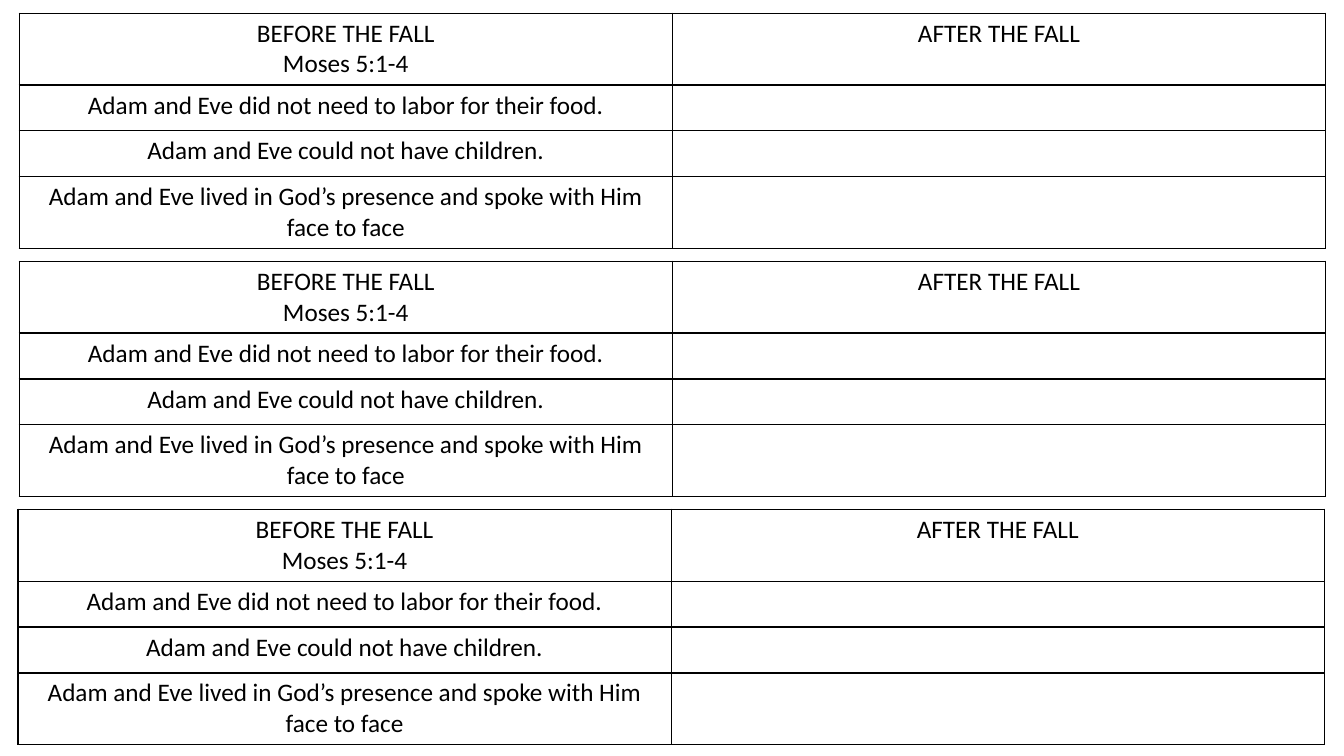
"""Three stacked worksheets comparing life before and after the Fall."""
from lxml.etree import SubElement
from pptx import Presentation
from pptx.dml.color import RGBColor
from pptx.enum.text import PP_ALIGN as Align
from pptx.oxml.ns import qn
from pptx.util import Pt

BLACK = RGBColor(0, 0, 0)
TEXT_FORMAT = {"name": "Calibri", "size": Pt(18), "bold": False}
COLUMN_WIDTH = 466.6
ROW_HEIGHTS = [51.3, 32.8, 32.8, 51.3]
FIRST_TOP, PITCH = 9.4, 177.2
WORKSHEET_LEFTS = [13.7, 13.7, 12.8]
STATEMENTS = [
    ("BEFORE THE FALL\nMoses 5:1-4", "AFTER THE FALL"),
    ("Adam and Eve did not need to labor for their food.", ""),
    ("Adam and Eve could not have children.", ""),
    ("Adam and Eve lived in God’s presence and spoke with Him face to face", ""),
]


def add_borders(cell):
    """Draw a thin black line on each side of the cell."""
    properties = cell._tc.get_or_add_tcPr()
    for position, side in enumerate(("a:lnL", "a:lnR", "a:lnT", "a:lnB")):
        line = SubElement(properties, qn(side), w=str(Pt(1)))
        properties.insert(position, line)
        fill = SubElement(line, qn("a:solidFill"))
        SubElement(fill, qn("a:srgbClr"), val=str(BLACK))


prs = Presentation()
prs.slide_width, prs.slide_height = Pt(960), Pt(540)
slide = prs.slides.add_slide(prs.slide_layouts[6])

for index, left in enumerate(WORKSHEET_LEFTS):
    worksheet = slide.shapes.add_table(
        len(STATEMENTS), 2, Pt(left), Pt(FIRST_TOP + index * PITCH),
        Pt(2 * COLUMN_WIDTH), Pt(sum(ROW_HEIGHTS))).table
    worksheet.first_row = worksheet.horz_banding = False
    for column in worksheet.columns:
        column.width = Pt(COLUMN_WIDTH)
    for row, height, statements in zip(worksheet.rows, ROW_HEIGHTS, STATEMENTS):
        row.height = Pt(height)
        for cell, statement in zip(row.cells, statements):
            cell.fill.background()
            add_borders(cell)
            cell.text = statement
            for paragraph in cell.text_frame.paragraphs:
                paragraph.alignment = Align.CENTER
                for run in paragraph.runs:
                    run.font.color.rgb = BLACK
                    for attribute, value in TEXT_FORMAT.items():
                        setattr(run.font, attribute, value)

prs.save("out.pptx")
